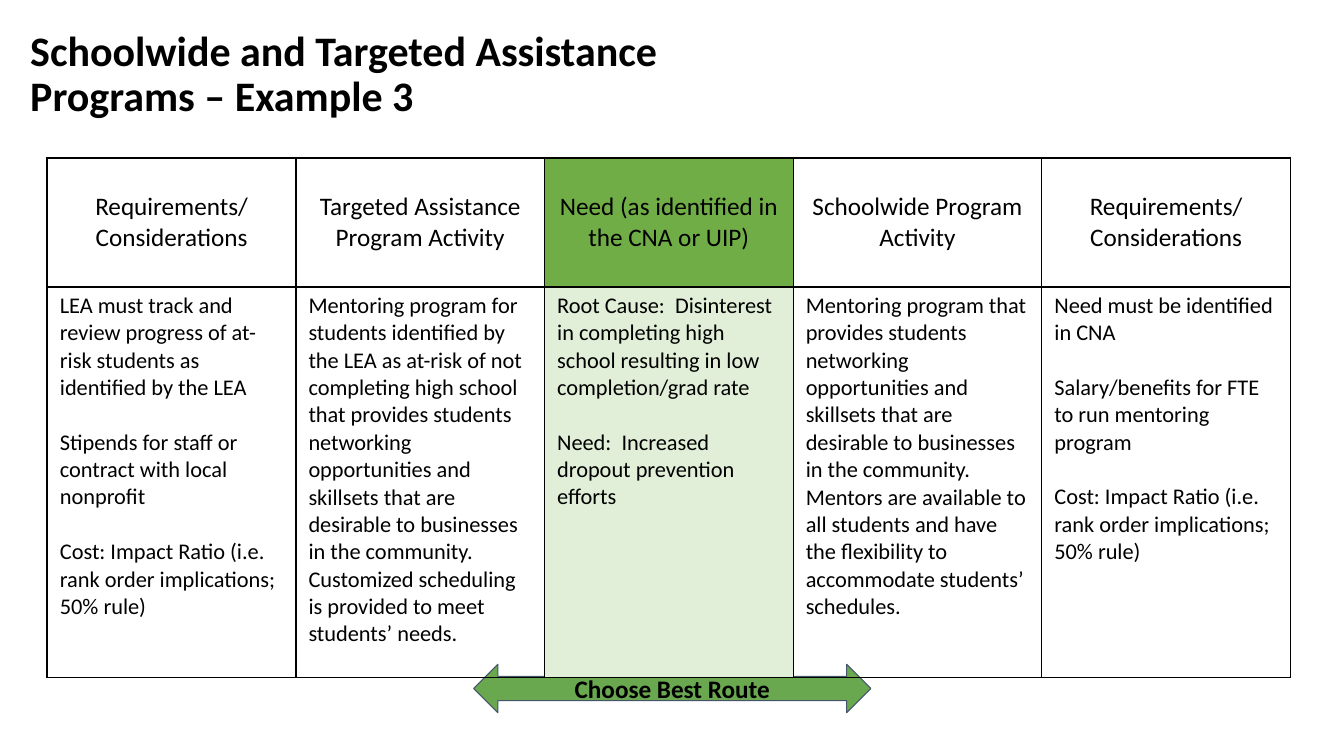
from pptx import Presentation
from pptx.dml.color import RGBColor
from pptx.enum.shapes import MSO_SHAPE as Shape
from pptx.enum.text import MSO_ANCHOR as Anchor, PP_ALIGN as Align
from pptx.oxml import parse_xml as to_xml
from pptx.oxml.ns import nsdecls
from pptx.util import Pt

HEADS = [
    "Requirements/Considerations",
    "Targeted Assistance Program Activity",
    "Need (as identified in the CNA or UIP)",
    "Schoolwide Program Activity",
    "Requirements/ Considerations",
]
COST = "Cost: Impact Ratio (i.e. rank order implications; 50% rule)"
SKILLS = ("provides students networking opportunities and skillsets that are "
          "desirable to businesses in the community.  ")
BODY = [
    ["LEA must track and review progress of at-risk students as identified by the LEA",
     "Stipends for staff or contract with local nonprofit", COST],
    ["Mentoring program for students identified by the LEA as at-risk of not "
     "completing high school that " + SKILLS +
     "Customized scheduling is provided to meet students’ needs."],
    ["Root Cause:  Disinterest in completing high school resulting in low "
     "completion/grad rate",
     "Need:  Increased dropout prevention efforts"],
    ["Mentoring program that " + SKILLS + "Mentors are available to all students "
     "and have the flexibility to accommodate students’ schedules."],
    ["Need must be identified in CNA",
     "Salary/benefits for FTE to run mentoring program", COST],
]
NEED = 2  # the highlighted column


def paint(color, code):
    color.rgb = RGBColor.from_string(code)


def write(frame, texts, size, bold=False, align=Align.LEFT, line=None, gap=0):
    for i, text in enumerate(texts):
        para = frame.paragraphs[0] if i == 0 else frame.add_paragraph()
        para.text = text
        para.alignment = align
        if line:
            para.line_spacing = line
        if i:
            para.space_before = Pt(gap)
        look = {"name": "Calibri", "size": Pt(size), "bold": bold}
        for key, value in look.items():
            setattr(para.runs[0].font, key, value)
        paint(para.runs[0].font.color, "000000")


def inset(frame, side, top):
    room = {"margin_left": side, "margin_right": side,
            "margin_top": top, "margin_bottom": top}
    for key, value in room.items():
        setattr(frame, key, Pt(value))


def border(cell, widths):
    props = cell._tc.get_or_add_tcPr()
    for i, (side, width) in enumerate(widths.items()):
        props.insert(i, to_xml(
            f'<a:ln{side} {nsdecls("a")} w="{Pt(width)}"><a:solidFill>'
            f'<a:srgbClr val="000000"/></a:solidFill></a:ln{side}>'))


def title(slide, x, y, w, h):
    frame = slide.shapes.add_textbox(Pt(x), Pt(y), Pt(w), Pt(h)).text_frame
    frame.word_wrap = True
    inset(frame, 0, 0)
    write(frame, ["Schoolwide and Targeted Assistance Programs – Example 3"],
          30, bold=True, line=0.9)


def route(slide, x, y, w, h):
    arrow = slide.shapes.add_shape(Shape.LEFT_RIGHT_ARROW, Pt(x), Pt(y), Pt(w), Pt(h))
    arrow.shadow.inherit = False
    arrow.fill.solid()
    paint(arrow.fill.fore_color, "6AA84F")
    paint(arrow.line.color, "44546A")
    arrow.line.width = Pt(0.75)
    frame = arrow.text_frame
    frame.word_wrap = True
    frame.vertical_anchor = Anchor.MIDDLE
    inset(frame, 7.2, 7.2)
    write(frame, ["Choose Best Route"], 18, bold=True, align=Align.CENTER)


def grid(slide, x, y, w, h, top):
    count = len(HEADS)
    table = slide.shapes.add_table(2, count, Pt(x), Pt(y), Pt(w), Pt(h)).table
    table.first_row = table.horz_banding = False
    for row, high in zip(table.rows, (top, h - top)):
        row.height = Pt(high)
    for col in range(count):
        table.columns[col].width = Pt(w / count)
        for row, fill in enumerate(("70AD47", "E1EFD8")):
            cell = table.cell(row, col)
            inset(cell, 9, 3.6)
            if col == NEED:
                cell.fill.solid()
                paint(cell.fill.fore_color, fill)
            else:
                cell.fill.background()
            border(cell, {"L": 1 if col else 1.5, "R": 1, "T": 1.5, "B": 1.5})
        # Heading above, considerations below
        head = table.cell(0, col)
        head.vertical_anchor = Anchor.MIDDLE
        write(head.text_frame, [HEADS[col]], 18, align=Align.CENTER)
        write(table.cell(1, col).text_frame, BODY[col], 16, gap=19.5)


def main():
    deck = Presentation()
    deck.slide_width, deck.slide_height = Pt(960), Pt(540)
    slide = deck.slides.add_slide(deck.slide_layouts[6])
    title(slide, 21.6, 21.6, 458.6, 56)
    route(slide, 338.4, 474.5, 283.7, 34.6)
    grid(slide, 33.8, 113, 888, 371, 92)
    deck.save("out.pptx")


if __name__ == "__main__":
    main()
